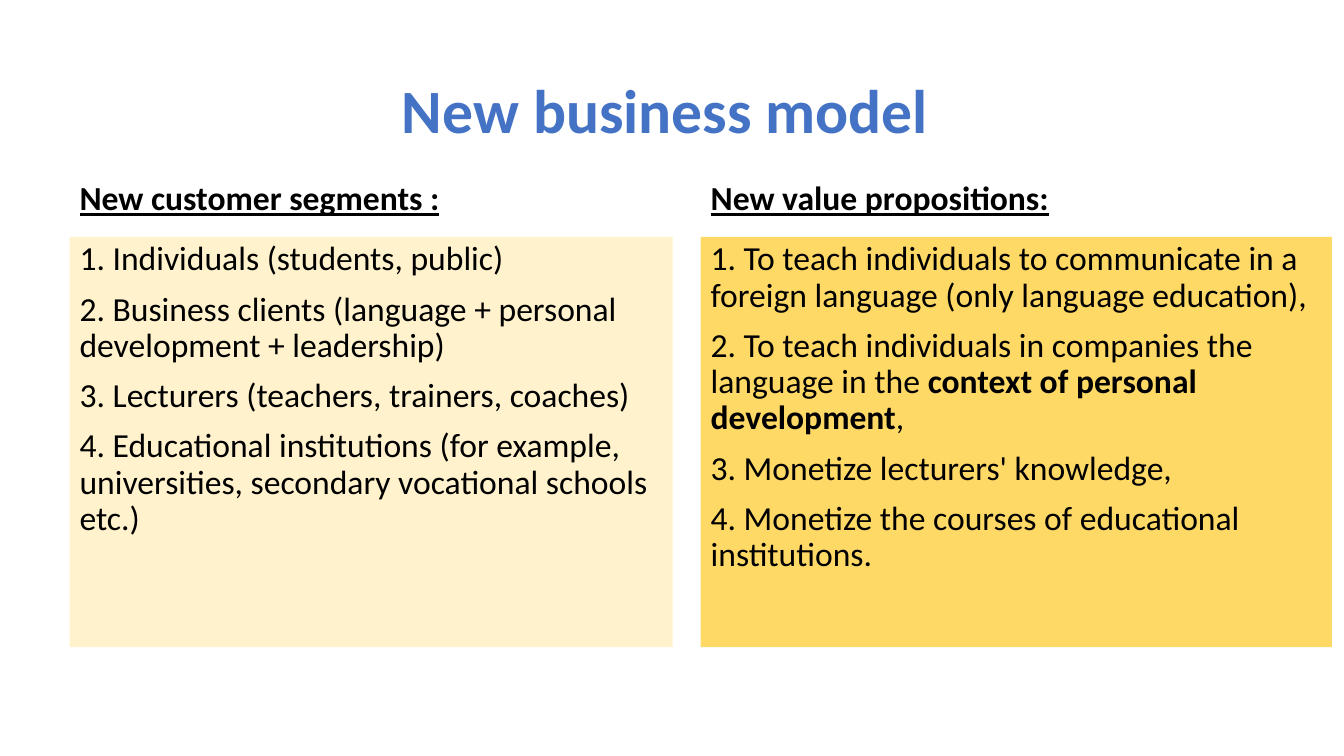
"""Build the "New business model" slide: a title above two headed, coloured panels."""
from pptx import Presentation
from pptx.dml.color import RGBColor as RGB
from pptx.enum.shapes import MSO_SHAPE as SHAPE
from pptx.enum.text import MSO_ANCHOR as ANCHOR, PP_ALIGN as ALIGN
from pptx.util import Inches, Pt

THEME = {
    "font": "Calibri", "title_size": 44, "body_size": 24,
    "title": "4472C4", "text": "000000", "segments": "FFF2CC", "values": "FFD966",
}

prs = Presentation()
prs.slide_width, prs.slide_height = Inches(13.33), Inches(7.5)
s = prs.slides.add_slide(prs.slide_layouts[6])


def box(left, top, width, height):
    """Turn percentages of the slide into a position and size."""
    w, h = prs.slide_width / 100, prs.slide_height / 100
    return [int(v) for v in (left * w, top * h, width * w, height * h)]


def write(sp, paragraphs, size=THEME["body_size"], color=THEME["text"], bold=False,
          underline=False, align=ALIGN.LEFT, anchor=ANCHOR.TOP, spacing=1.0, before=0):
    """Fill a shape with paragraphs; text between ** marks is bold."""
    tf = sp.text_frame
    tf.word_wrap, tf.vertical_anchor = True, anchor
    for i, text in enumerate(paragraphs):
        p = tf.paragraphs[0] if i == 0 else tf.add_paragraph()
        p.alignment, p.line_spacing = align, spacing
        p.space_before = Pt(before if i else 0)
        for j, part in enumerate(text.split("**")):
            r = p.add_run()
            r.text = part
            r.font.name, r.font.size = THEME["font"], Pt(size)
            r.font.bold, r.font.underline = bold or j % 2 == 1, underline
            r.font.color.rgb = RGB.from_string(color)


write(s.shapes.add_textbox(*box(6.9, 5.33, 86.27, 19.33)), ["New business model "],
      size=THEME["title_size"], color=THEME["title"], bold=True,
      align=ALIGN.CENTER, anchor=ANCHOR.MIDDLE, spacing=0.9)

columns = [
    (5.18, 44.86, THEME["segments"], "New customer segments :", [
        "1. Individuals (students, public)",
        "2. Business clients (language + personal development + leadership)",
        "3. Lecturers (teachers, trainers, coaches)",
        "4. Educational institutions (for example, universities, "
        "secondary vocational schools etc.)",
    ]),
    (52.14, 46.96, THEME["values"], "New value propositions:", [
        "1. To teach individuals to communicate in a foreign language "
        "(only language education),",
        "2. To teach individuals in companies the language in the "
        "**context of personal development**,",
        "3. Monetize lecturers' knowledge,",
        "4. Monetize the courses of educational institutions.",
    ]),
]

for left, width, fill, heading, items in columns:
    sp = s.shapes.add_shape(SHAPE.RECTANGLE, *box(left, 31.33, width, 54.27))
    sp.shadow.inherit = False
    sp.fill.solid()
    sp.fill.fore_color.rgb = RGB.from_string(fill)
    sp.line.fill.background()
    write(sp, items, spacing=0.9, before=10)
    write(s.shapes.add_textbox(*box(left, 22.8, width, 6.67)), [heading],
          bold=True, underline=True)

prs.save("out.pptx")
